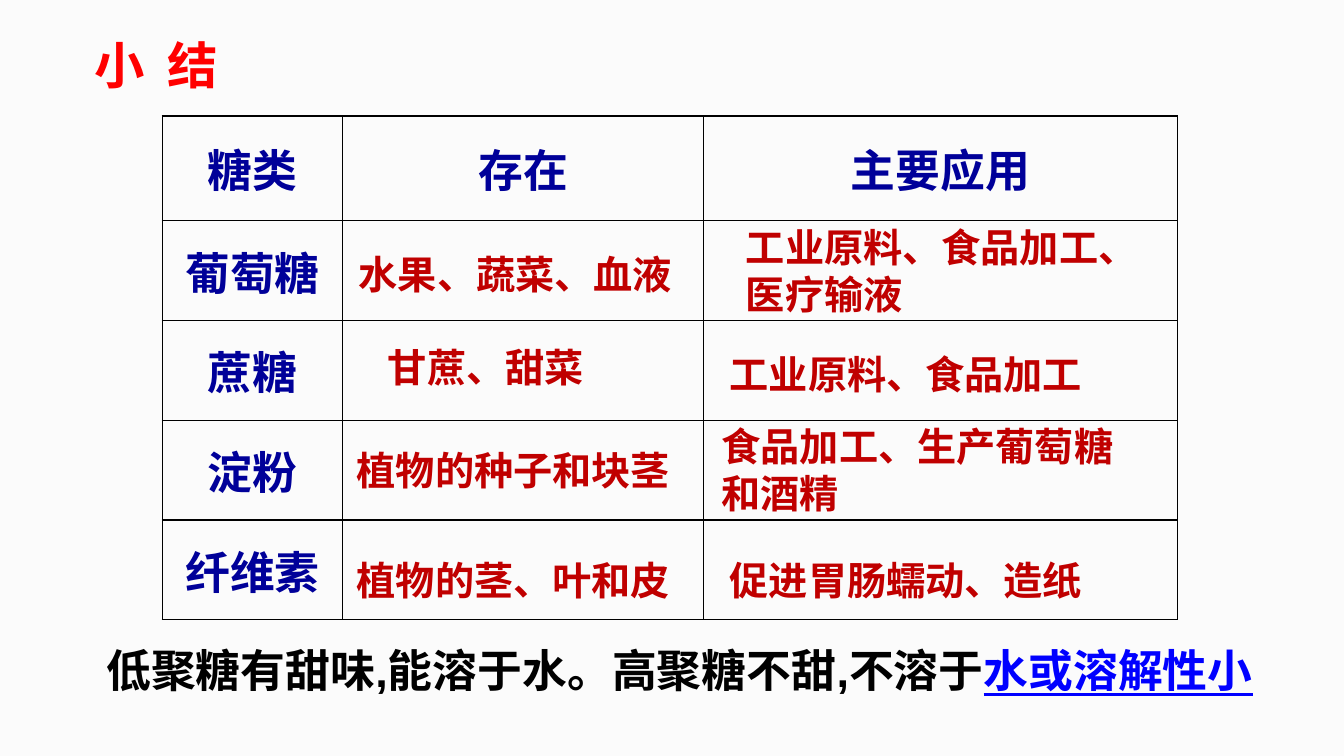
from pptx import Presentation
from pptx.dml.color import RGBColor
from pptx.enum.text import MSO_ANCHOR, MSO_AUTO_SIZE, PP_ALIGN
from pptx.oxml import parse_xml
from pptx.oxml.ns import nsdecls
from pptx.util import Inches, Pt

CJK = "Noto Sans CJK SC"
THEME = {
    "background": "FBFBFB",
    "border": "000000",
    "title": {"size": 36, "name": CJK, "color": "FF0000"},
    "label": {"size": 32, "name": CJK, "color": "000099"},
    "answer": {"size": 28, "name": CJK, "color": "C00000"},
    "summary": {"size": 32, "name": "Arial", "color": "000000"},
    "emphasis": {"size": 32, "name": "Arial", "color": "0000FF", "underline": True},
}


def add_text(paragraph, text, role):
    run = paragraph.add_run()
    run.text = text
    formats = {**THEME[role], "bold": True}
    run.font.color.rgb = RGBColor.from_string(formats.pop("color"))
    formats["size"] = Pt(formats["size"])
    for attribute, value in formats.items():
        setattr(run.font, attribute, value)
    run.font._element.append(parse_xml(f'<a:ea {nsdecls("a")} typeface="{CJK}"/>'))
    return run


def add_box(left, top, width, height):
    frame = slide.shapes.add_textbox(
        Inches(left), Inches(top), Inches(width), Inches(height)).text_frame
    frame.word_wrap = True
    frame.auto_size = MSO_AUTO_SIZE.SHAPE_TO_FIT_TEXT
    return frame.paragraphs[0]


prs = Presentation()
prs.slide_width, prs.slide_height = Inches(13.33), Inches(7.5)
slide = prs.slides.add_slide(prs.slide_layouts[5])
slide.background.fill.solid()
slide.background.fill.fore_color.rgb = RGBColor.from_string(THEME["background"])

heading = slide.shapes.title
heading.left, heading.top = Inches(0.84), Inches(0.29)
heading.width, heading.height = Inches(1.75), Inches(0.71)
heading.text_frame.vertical_anchor = MSO_ANCHOR.TOP
heading.text_frame.auto_size = MSO_AUTO_SIZE.NONE
heading_line = heading.text_frame.paragraphs[0]
heading_line.alignment = PP_ALIGN.LEFT
add_text(heading_line, "小 结", "title").font._element.set("spc", "400")

headers = ["糖类", "存在", "主要应用"]
sugars = ["葡萄糖", "蔗糖", "淀粉", "纤维素"]
column_widths = [1.79, 3.58, 4.7]
row_heights = [1.04] + [0.99] * len(sugars)
sugar_table = slide.shapes.add_table(
    len(row_heights), len(column_widths), Inches(1.61), Inches(1.15),
    Inches(sum(column_widths)), Inches(sum(row_heights))).table
sugar_table.first_row = sugar_table.horz_banding = False
for column, width in zip(sugar_table.columns, column_widths):
    column.width = Inches(width)
for row, height in zip(sugar_table.rows, row_heights):
    row.height = Inches(height)

for cell in sugar_table.iter_cells():
    cell.vertical_anchor = MSO_ANCHOR.MIDDLE
    cell.fill.background()
    cell_format = cell._tc.get_or_add_tcPr()
    for position, side in enumerate("LRTB"):
        cell_format.insert(position, parse_xml(
            f'<a:ln{side} {nsdecls("a")} w="{Pt(1)}"><a:solidFill>'
            f'<a:srgbClr val="{THEME["border"]}"/></a:solidFill></a:ln{side}>'))

labels = [(0, column, text) for column, text in enumerate(headers)]
labels += [(row, 0, text) for row, text in enumerate(sugars, 1)]
for row, column, text in labels:
    label_line = sugar_table.cell(row, column).text_frame.paragraphs[0]
    label_line.alignment = PP_ALIGN.CENTER
    add_text(label_line, text, "label")

answers = [
    ("水果、蔬菜、血液", 3.46, 2.43, 3.81, 0.57),
    ("工业原料、食品加工、医疗输液", 7.3, 2.17, 4.16, 1.04),
    ("甘蔗、甜菜", 3.75, 3.36, 2.54, 0.57),
    ("工业原料、食品加工", 7.14, 3.43, 4.33, 0.57),
    ("植物的种子和块茎", 3.44, 4.38, 3.76, 0.57),
    ("食品加工、生产葡萄糖和酒精", 7.06, 4.14, 4.33, 1.04),
    ("植物的茎、叶和皮", 3.44, 5.47, 3.86, 0.57),
    ("促进胃肠蠕动、造纸", 7.14, 5.47, 4.5, 0.57),
]
for text, *place in answers:
    add_text(add_box(*place), text, "answer")

summary = add_box(0.35, 6.33, 12.78, 0.64)
summary.alignment = PP_ALIGN.CENTER
add_text(summary, "低聚糖有甜味,能溶于水。高聚糖不甜,不溶于", "summary")
add_text(summary, "水或溶解性小", "emphasis")

prs.save("out.pptx")
